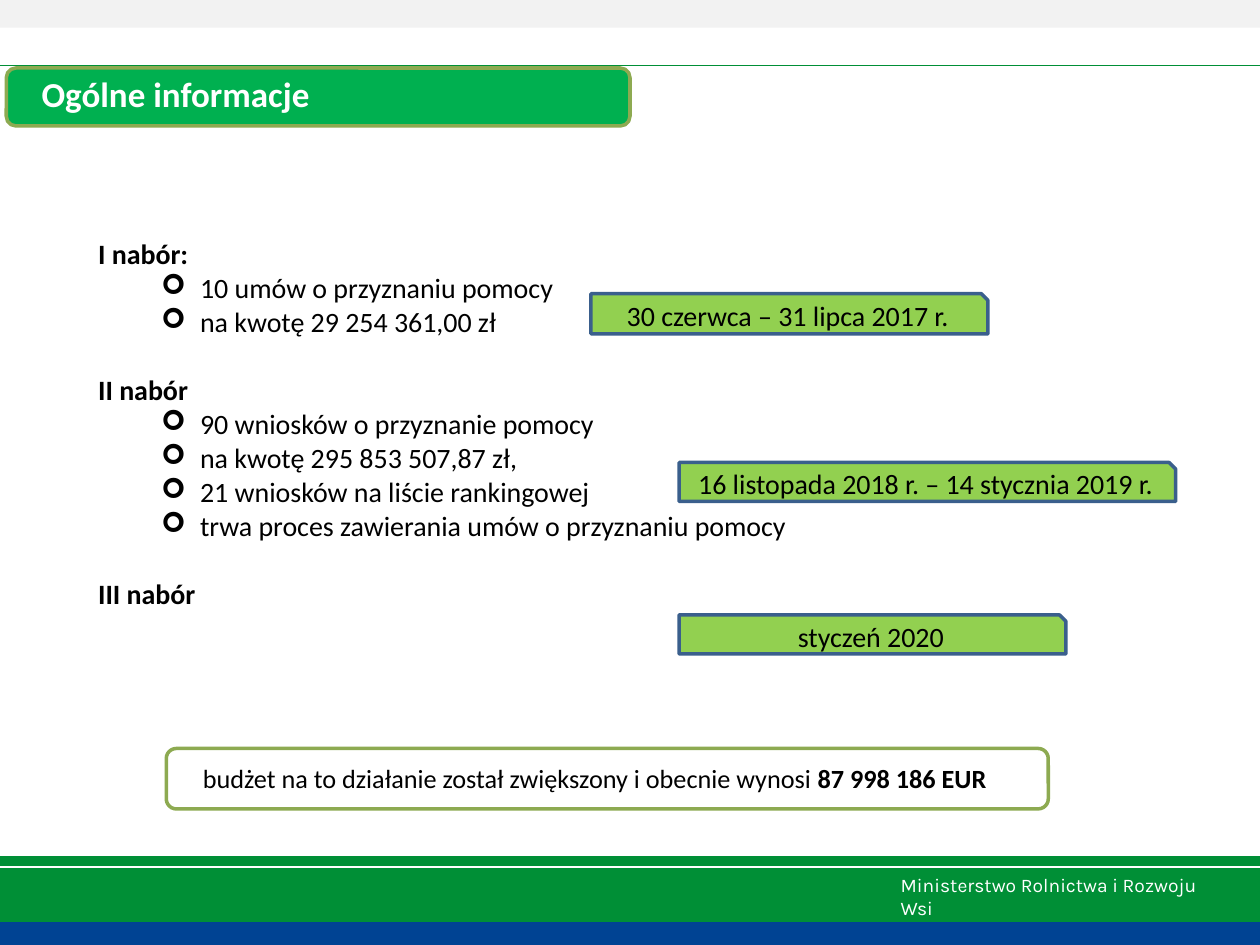
from lxml.etree import SubElement
from pptx import Presentation
from pptx.dml.color import RGBColor
from pptx.enum.shapes import MSO_CONNECTOR, MSO_SHAPE as Shape
from pptx.enum.text import MSO_ANCHOR as Anchor, MSO_AUTO_SIZE as AutoSize, PP_ALIGN as Align
from pptx.oxml.ns import qn
from pptx.util import Inches, Pt

W, H = 10, 7.5
COLORS = {
    "green": "008F36", "blue": "004393", "gray": "F2F2F2", "title": "00B050",
    "frame": "8DAA51", "date": "92D050", "date_line": "3A5F8C",
    "white": "FFFFFF", "black": "000000",
}
CALLS = [
    ("I nabór:", ["10 umów o przyznaniu pomocy", "na kwotę 29 254 361,00 zł"]),
    ("II nabór", ["90 wniosków o przyznanie pomocy", "na kwotę 295 853 507,87 zł,",
                  "21 wniosków na liście rankingowej",
                  "trwa proces zawierania umów o przyznaniu pomocy"]),
    ("III nabór", []),
]
DATES = [
    ("30 czerwca – 31 lipca 2017 r.", (4.69, 2.33, 3.15, 0.32)),
    ("16 listopada 2018 r. – 14 stycznia 2019 r.", (5.39, 3.67, 3.94, 0.31)),
    ("styczeń 2020", (5.39, 4.88, 3.07, 0.31)),
]


def rgb(name):
    """Return the palette colour of this name."""
    return RGBColor.from_string(COLORS[name])


def add_box(s, kind, box, fill, line=None):
    """Add a filled preset shape, outlined if a line colour is given."""
    sp = s.shapes.add_shape(kind, *map(Inches, box))
    sp.shadow.inherit = False
    sp.fill.solid()
    sp.fill.fore_color.rgb = rgb(fill)
    if line:
        sp.line.color.rgb = rgb(line)
        sp.line.width = Pt(2)
    else:
        sp.line.fill.background()
    return sp


def add_rule(s, y, color, width):
    """Add a horizontal line across the slide."""
    c = s.shapes.add_connector(MSO_CONNECTOR.STRAIGHT, 0, Inches(y), Inches(W), Inches(y))
    c.line.color.rgb = rgb(color)
    c.line.width = Pt(width)
    SubElement(c._element.spPr, qn("a:effectLst"))


def add_text(s, box):
    """Add a wrapping text box and return its shape."""
    sp = s.shapes.add_textbox(*map(Inches, box))
    sp.text_frame.word_wrap = True
    return sp


def format_runs(p, size, color="black", bold=False, font="Calibri"):
    """Format every run of a paragraph."""
    for r in p.runs:
        r.font.size = Pt(size)
        r.font.name = font
        r.font.bold = bold
        r.font.color.rgb = rgb(color)


def set_label_frame(tf):
    """Centre a label vertically between its side insets."""
    tf.auto_size = AutoSize.NONE
    tf.vertical_anchor = Anchor.MIDDLE
    tf.margin_left = tf.margin_right = Inches(0.26)
    tf.margin_top = tf.margin_bottom = 0
    tf.paragraphs[0].line_spacing = 0.9


def set_indent(p, left, first, bullet=None):
    """Set the left and first-line indents and the bullet of a paragraph."""
    pPr = p._p.get_or_add_pPr()
    pPr.set("marL", str(Inches(left)))
    pPr.set("indent", str(Inches(first)))
    if bullet:
        SubElement(pPr, qn("a:buFont")).set("typeface", "Wingdings")
        SubElement(pPr, qn("a:buChar")).set("char", bullet)
    else:
        SubElement(pPr, qn("a:buNone"))


def add_title(s):
    """Lay the title placeholder over its green plate."""
    add_box(s, Shape.ROUNDED_RECTANGLE, (0.05, 0.54, 4.95, 0.46), "title", "frame")
    sp = s.shapes.title
    s.shapes._spTree.append(sp._element)
    sp.left, sp.top, sp.width, sp.height = map(Inches, (0.07, 0.56, 4.91, 0.41))
    tf = sp.text_frame
    tf.text = "Ogólne informacje"
    set_label_frame(tf)
    tf.paragraphs[0].alignment = Align.LEFT
    format_runs(tf.paragraphs[0], 20, "white", True)


def add_calls(s):
    """Add the list of calls with their bulleted details."""
    tf = add_text(s, (0.49, 1.86, 6.8, 3.17)).text_frame
    p = None
    for heading, details in CALLS:
        for i, text in enumerate([heading, *details]):
            p = tf.add_paragraph() if p else tf.paragraphs[0]
            p.text = text
            p.line_spacing = 0.9
            p.space_after = Pt(21.8 if i == len(details) else 2.1)
            if i:
                p.level = 1
                set_indent(p, 1, -0.31, "➢")
            else:
                set_indent(p, 0.19, 0)
            format_runs(p, 16, bold=i == 0)


def add_date(s, text, box):
    """Add a date tag with a snipped corner."""
    tf = add_box(s, Shape.SNIP_1_RECTANGLE, box, "date", "date_line").text_frame
    tf.text = text
    tf.vertical_anchor = Anchor.MIDDLE
    tf.paragraphs[0].alignment = Align.CENTER
    format_runs(tf.paragraphs[0], 16)


def add_budget(s):
    """Add the framed budget statement."""
    add_box(s, Shape.ROUNDED_RECTANGLE, (1.32, 5.94, 7, 0.48), "white", "frame")
    tf = add_text(s, (1.35, 5.97, 6.95, 0.44)).text_frame
    set_label_frame(tf)
    p = tf.paragraphs[0]
    p.text = "budżet na to działanie został zwiększony i obecnie wynosi "
    amount = p.add_run()
    amount.text = "87 998 186 EUR"
    format_runs(p, 15)
    amount.font.bold = True


def add_footer(s):
    """Add the coloured footer bands with the ministry name."""
    for height, color in ((0.69, "green"), (0.17, "blue")):
        add_box(s, Shape.RECTANGLE, (0, H - height, W, height), color, color)
    p = add_text(s, (7.05, 6.88, 2.83, 0.29)).text_frame.paragraphs[0]
    p.text = "Ministerstwo Rolnictwa i Rozwoju Wsi"
    format_runs(p, 11, "white", font="Karla")
    add_rule(s, 6.88, "white", 1.5)


def main():
    """Build and save the slide."""
    prs = Presentation()
    prs.slide_width, prs.slide_height = Inches(W), Inches(H)
    s = prs.slides.add_slide(prs.slide_layouts[5])
    add_footer(s)
    add_rule(s, 0.52, "green", 0.75)
    add_box(s, Shape.RECTANGLE, (0, 0, W, 0.22), "gray")
    add_calls(s)
    add_title(s)
    for text, box in DATES:
        add_date(s, text, box)
    add_budget(s)
    prs.save("out.pptx")


if __name__ == "__main__":
    main()
